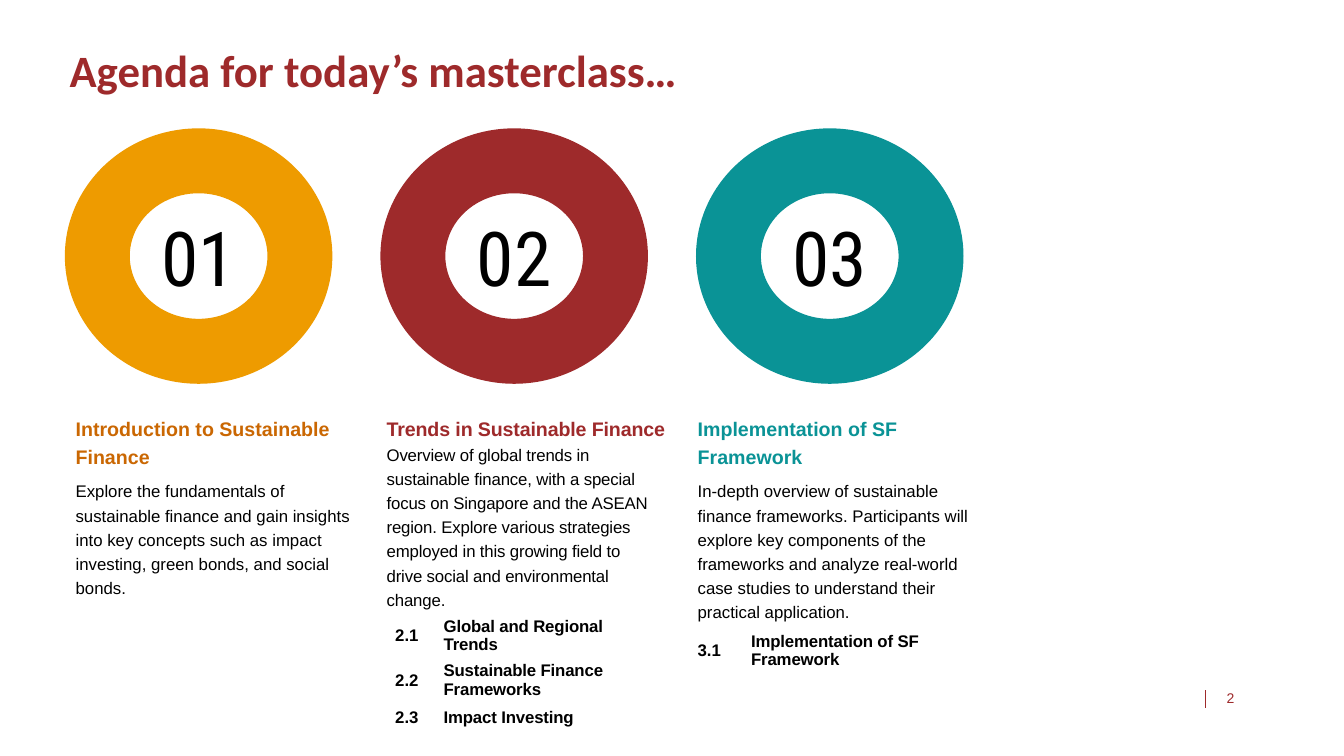
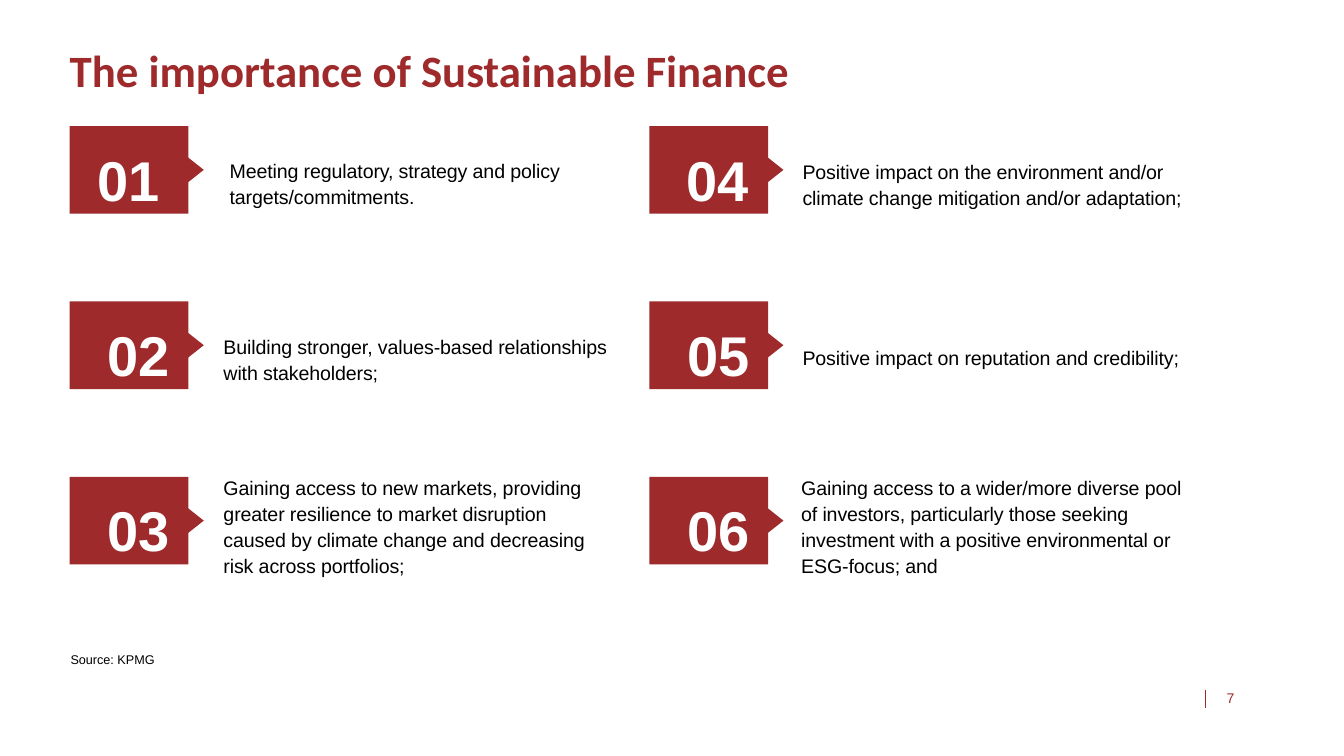
import dataclasses
import pptx
import pptx.dml.color
import pptx.enum.shapes
import pptx.enum.text
import pptx.oxml
import pptx.util

# Shared look
RED, AMBER, ORANGE, TEAL = "9E2A2B", "EE9B00", "CA6702", "0A9396"
BLACK, WHITE = "000000", "FFFFFF"
SLIDE_WIDTH, SLIDE_HEIGHT = 13.33, 7.5
SHAPE = pptx.enum.shapes.MSO_SHAPE
ALIGN = pptx.enum.text.PP_ALIGN
ANCHOR = pptx.enum.text.MSO_ANCHOR


def across(share):
    """Percent of the slide width as a length."""
    return pptx.util.Inches(SLIDE_WIDTH * share / 100)


def down(share):
    """Percent of the slide height as a length."""
    return pptx.util.Inches(SLIDE_HEIGHT * share / 100)


@dataclasses.dataclass
class Box:
    """An area in percent of the slide."""
    left: float
    top: float
    width: float
    height: float

    def inner(self, left, top, width, height):
        return Box(self.left + left, self.top + top, width, height)

    def lengths(self):
        return (across(self.left), down(self.top),
                across(self.width), down(self.height))


def color(value):
    return pptx.dml.color.RGBColor.from_string(value)


def add_para(frame, text, first=False, size=12, font="Arial", ink=BLACK,
             bold=False, align=ALIGN.LEFT, spacing=1.0, after=0, tracking=0):
    para = frame.paragraphs[0] if first else frame.add_paragraph()
    para.alignment = align
    para.line_spacing = spacing
    para.space_before = pptx.util.Pt(0)
    para.space_after = pptx.util.Pt(after)
    for index, line in enumerate(text.split("\n")):
        if index:
            para.add_line_break()
        span = para.add_run()
        span.text = line
        span.font.size = pptx.util.Pt(size)
        span.font.name = font
        span.font.bold = bold
        span.font.color.rgb = color(ink)
        if tracking:
            span._r.get_or_add_rPr().set("spc", str(round(tracking * 100)))


def prepare_frame(frame, anchor=ANCHOR.TOP, left=0, top=0):
    frame.word_wrap = True
    frame.vertical_anchor = anchor
    frame.margin_left, frame.margin_top = across(left), down(top)
    frame.margin_right = frame.margin_bottom = 0
    return frame


def add_text(page, box, text, anchor=ANCHOR.TOP, **format):
    shape = page.shapes.add_textbox(*box.lengths())
    frame = prepare_frame(shape.text_frame, anchor)
    add_para(frame, text, first=True, **format)
    return frame


def paint(shape, fill, outline=False):
    shape.shadow.inherit = False
    shape.fill.solid()
    shape.fill.fore_color.rgb = color(fill)
    if outline:
        shape.line.color.rgb = color(fill)
        shape.line.width = pptx.util.Pt(1)
    else:
        shape.line.fill.background()


def add_page(deck, title, number):
    """A blank page with the shared title and page number."""
    page = deck.slides.add_slide(deck.slide_layouts[6])
    add_text(page, Box(5.18, 6.27, 69.24, 7.73), title, anchor=ANCHOR.MIDDLE,
             size=32, font="Calibri", ink=RED, bold=True, spacing=0.7)
    footer = Box(89.65, 91.33, 2.18, 2.27)
    add_text(page, footer.inner(0.15, 0, 2.03, 2.13), str(number),
             anchor=ANCHOR.BOTTOM, size=10, ink=RED, align=ALIGN.RIGHT)
    left, top, _, height = footer.lengths()
    rule = page.shapes.add_connector(
        pptx.enum.shapes.MSO_CONNECTOR.STRAIGHT, left, top, left, top + height)
    rule.line.color.rgb = color(RED)
    rule.line.width = pptx.util.Pt(0.5)
    rule._element.spPr.append(pptx.oxml.parse_xml(
        '<a:effectLst xmlns:a='
        '"http://schemas.openxmlformats.org/drawingml/2006/main"/>'))
    return page


# Agenda
def add_ring(page, box, label, fill):
    add_text(page, box.inner(6, 14, 7.8, 8.53), label, anchor=ANCHOR.MIDDLE,
             size=54, font="Roboto Condensed", align=ALIGN.CENTER, spacing=0.7)
    paint(page.shapes.add_shape(SHAPE.DONUT, *box.lengths()), fill, True)


def add_topic(page, box, heading, body, ink, after, tracking):
    frame = add_text(page, box, heading, size=14, ink=ink, bold=True,
                     spacing=1.2, after=after, tracking=tracking)
    add_para(frame, body, spacing=1.2, tracking=tracking)


def add_subtopics(page, box, number_width, line_points, rows):
    """Rows hold number, name, row height and top margin."""
    table = page.shapes.add_table(len(rows), 2, *box.lengths()).table
    table.first_row = table.horz_banding = False
    table.columns[0].width = across(number_width)
    table.columns[1].width = across(box.width - number_width)
    for index, (number, name, height, top) in enumerate(rows):
        table.rows[index].height = down(height)
        for column, (text, left) in enumerate(((number, 1.05), (name, 1.35))):
            cell = table.cell(index, column)
            cell.fill.background()
            cell.vertical_anchor = ANCHOR.MIDDLE
            cell.margin_left, cell.margin_top = across(left), down(top)
            cell.margin_right = cell.margin_bottom = 0
            spacing = 1.0 if index == 1 else pptx.util.Pt(line_points)
            add_para(cell.text_frame, text, first=True, bold=True,
                     spacing=spacing, tracking=-0.1 * column)


def build_agenda(deck):
    page = add_page(deck, "Agenda for today’s masterclass…", 2)
    # ring fill, heading colour, heading, body, space after heading, tracking
    topics = [
        (AMBER, ORANGE, "Introduction to Sustainable Finance",
         "Explore the fundamentals of sustainable finance and gain insights "
         "into key concepts such as impact investing, green bonds, and "
         "social bonds.", 6, 0),
        (RED, RED, "Trends in Sustainable Finance",
         "Overview of global trends in sustainable finance, with a special "
         "focus on Singapore and the ASEAN region. Explore various "
         "strategies employed in this growing field to\ndrive social and "
         "environmental change.", 0, -0.1),
        (TEAL, TEAL, "Implementation of SF Framework",
         "In-depth overview of sustainable finance frameworks. Participants "
         "will explore key components of the frameworks and analyze "
         "real-world case studies to understand their practical "
         "application.", 6, 0),
    ]
    for index, (fill, ink, heading, body, after, tracking) in enumerate(topics):
        add_ring(page, Box(4.88 + 23.48 * index, 17.07, 19.8, 33.6),
                 f"{index + 1:02d}", fill)
        add_topic(page, Box(5.63 + 23.14 * index, 54.53, 21, 26),
                  heading, body, ink, after, tracking)
    add_subtopics(page, Box(28.36, 81.6, 20.86, 14.53), 3.3, 13.2, [
        ("2.1", "Global and Regional Trends", 4.93, 0),
        ("2.2", "Sustainable Finance Frameworks", 6, 0.8),
        ("2.3", "Impact Investing", 3.6, 0.93),
    ])
    add_subtopics(page, Box(50.86, 83.2, 23.63, 5.87), 3.68, 12.4, [
        ("3.1", "Implementation of SF Framework", 5.87, 0),
    ])


# Importance
def add_reason(page, box, number, text, indent, text_area):
    tile = page.shapes.add_shape(SHAPE.RECTANGLE, *box.lengths())
    paint(tile, RED)
    frame = prepare_frame(tile.text_frame, left=indent, top=2.53)
    add_para(frame, number, first=True, size=40, ink=WHITE, bold=True,
             tracking=-0.1)
    # Pointer on the right edge of the tile
    left, top, width, height = box.inner(8.7, 4, 1.28, 3.6).lengths()
    outline = page.shapes.build_freeform(left, top)
    outline.add_line_segments(
        [(left, top + height), (left + width, top + height // 2)], close=True)
    paint(outline.convert_to_shape(), RED)
    add_text(page, box.inner(*text_area), text, size=14, spacing=1.1,
             tracking=-0.1)


def build_importance(deck):
    page = add_page(deck, "The importance of Sustainable Finance", 7)
    # text, number indent, text area relative to the tile
    reasons = [
        ("Meeting regulatory, strategy and policy targets/commitments.",
         2.1, (11.9, 4, 25.13, 6.8)),
        ("Building stronger, values-based relationships with stakeholders;",
         2.85, (11.45, 4.13, 29.11, 6.8)),
        ("Gaining access to new markets, providing greater resilience to "
         "market disruption caused by climate change and decreasing risk "
         "across portfolios;", 2.85, (11.45, -0.4, 27.38, 14)),
        ("Positive impact on the environment and/or climate change "
         "mitigation and/or adaptation;", 2.78, (11.4, 4.13, 28.73, 6.8)),
        ("Positive impact on reputation and credibility;",
         2.85, (11.4, 5.6, 28.73, 3.33)),
        ("Gaining access to a wider/more diverse pool of investors, "
         "particularly those seeking investment with a positive "
         "environmental or ESG-focus; and", 2.85, (11.3, -0.4, 28.73, 14)),
    ]
    for index, (text, indent, text_area) in enumerate(reasons):
        column, row = divmod(index, 3)
        box = Box(5.18 + 43.13 * column, 16.67 + 23.2 * row, 8.85, 11.6)
        add_reason(page, box, f"{index + 1:02d}", text, indent, text_area)
    add_text(page, Box(5.25, 86.27, 6.45, 2.27), "Source: KPMG", size=9)


def main():
    deck = pptx.Presentation()
    deck.slide_width = pptx.util.Inches(SLIDE_WIDTH)
    deck.slide_height = pptx.util.Inches(SLIDE_HEIGHT)
    build_agenda(deck)
    build_importance(deck)
    deck.save("out.pptx")


if __name__ == "__main__":
    main()
